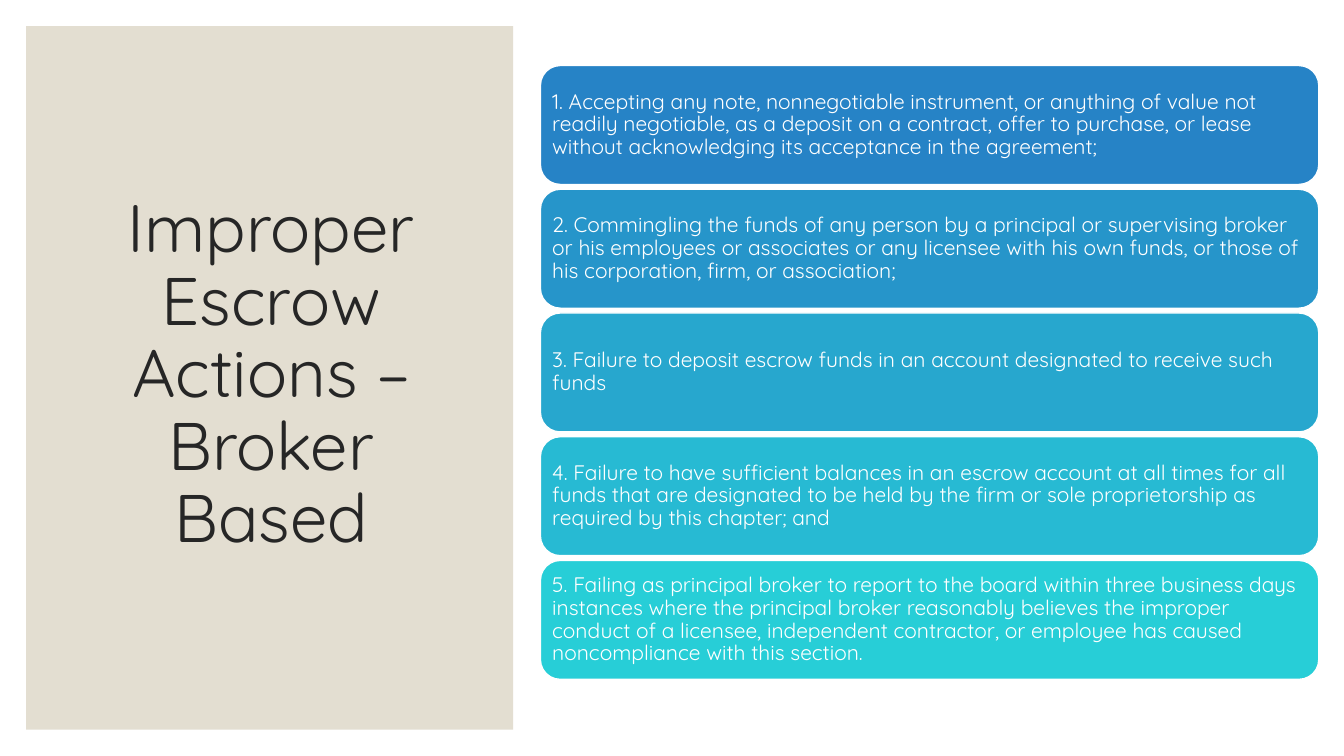
from pptx import Presentation
from pptx.dml.color import RGBColor
from pptx.enum.shapes import MSO_SHAPE
from pptx.enum.text import MSO_ANCHOR, PP_ALIGN
from pptx.util import Inches, Pt

RECT = MSO_SHAPE.RECTANGLE
ROUND = MSO_SHAPE.ROUNDED_RECTANGLE
MIDDLE = MSO_ANCHOR.MIDDLE
LEFT = PP_ALIGN.LEFT
CENTER = PP_ALIGN.CENTER

FONT = "Quicksand"
WHITE = "FFFFFF"
SAND = "E3DED1"
INK = "262626"

TITLE = "Improper Escrow Actions – Broker Based"
ACTS = [
    ("2683C6", "1. Accepting any note, nonnegotiable instrument, or anything of value not readily negotiable, as a deposit on a contract, offer to purchase, or lease without acknowledging its acceptance in the agreement;"),
    ("2695CA", "2. Commingling the funds of any person by a principal or supervising broker or his employees or associates or any licensee with his own funds, or those of his corporation, firm, or association;"),
    ("27A7CE", "3. Failure to deposit escrow funds in an account designated to receive such funds"),
    ("27BAD3", "4. Failure to have sufficient balances in an escrow account at all times for all funds that are designated to be held by the firm or sole proprietorship as required by this chapter; and"),
    ("27CED7", "5. Failing as principal broker to report to the board within three business days instances where the principal broker reasonably believes the improper conduct of a licensee, independent contractor, or employee has caused noncompliance with this section."),
]

PANEL = (0.26, 0.26, 4.83, 6.98)
HEAD = (0.63, 0.61, 4.12, 6.24)
CARD_X, CARD_W, CARD_H = 5.36, 7.72, 1.18
FIRST_Y, LAST_Y = 0.65, 5.56
PAD = 0.06


def color(code):
    return RGBColor.from_string(code)


def add_box(slide, kind, box, fill, line=None):
    shape = slide.shapes.add_shape(kind, *map(Inches, box))
    shape.shadow.inherit = False
    shape.fill.solid()
    shape.fill.fore_color.rgb = color(fill)
    if line:
        shape.line.color.rgb = color(line)
        shape.line.width = Pt(1)
    else:
        shape.line.fill.background()
    return shape


def write(shape, text, size, ink, align):
    frame = shape.text_frame
    frame.text = text
    frame.word_wrap = True
    frame.vertical_anchor = MIDDLE
    para = frame.paragraphs[0]
    para.alignment = align
    para.line_spacing = 0.9
    font = para.runs[0].font
    font.name = FONT
    font.size = Pt(size)
    font.color.rgb = color(ink)
    return frame


def main():
    deck = Presentation()
    deck.slide_width = Inches(13.33)
    deck.slide_height = Inches(7.5)
    slide = deck.slides.add_slide(deck.slide_layouts[6])

    add_box(slide, RECT, PANEL, SAND)
    head = slide.shapes.add_textbox(*map(Inches, HEAD))
    write(head, TITLE, 48, INK, CENTER)

    step = (LAST_Y - FIRST_Y) / (len(ACTS) - 1)
    for i, (fill, text) in enumerate(ACTS):
        box = (CARD_X, FIRST_Y + i * step, CARD_W, CARD_H)
        card = add_box(slide, ROUND, box, fill, WHITE)
        frame = write(card, text, 15, WHITE, LEFT)
        frame.margin_left = frame.margin_right = Inches(PAD)
        frame.margin_top = frame.margin_bottom = Inches(PAD)

    deck.save("out.pptx")


if __name__ == "__main__":
    main()
